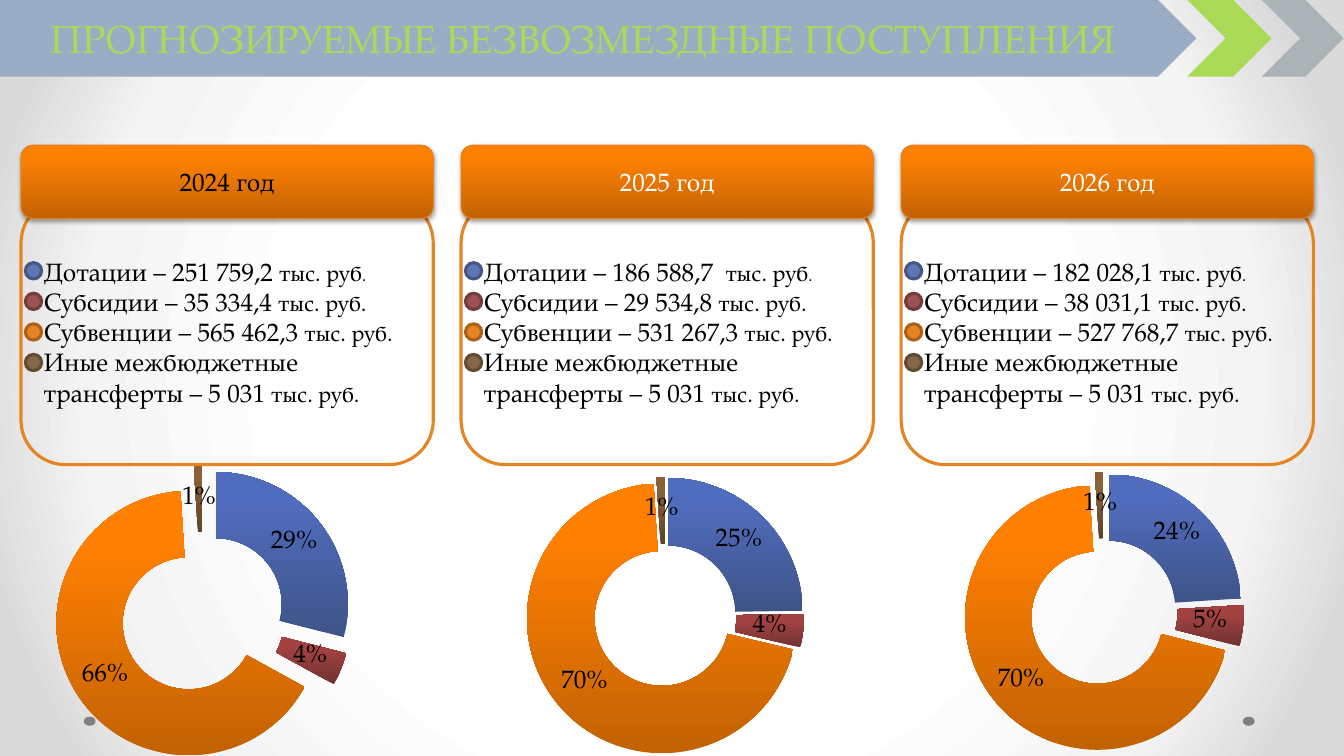
"""Build the slide on forecast grants for 2024 to 2026."""
from pptx import Presentation
from pptx.chart import data as cd
from pptx.dml.color import RGBColor
from pptx.enum import chart as ch, shapes as sh, text as tx
from pptx.oxml import parse_xml
from pptx.oxml.ns import nsdecls, qn
from pptx.util import Cm, Pt

FONT = "TeX Gyre Pagella"
BLACK = RGBColor(0x00, 0x00, 0x00)
WHITE = RGBColor(0xFF, 0xFF, 0xFF)
GREEN = RGBColor(0xAB, 0xD9, 0x58)
STEEL = RGBColor(0x9B, 0xAD, 0xC4)
SILVER = RGBColor(0xAC, 0xB3, 0xB6)
GRAY = RGBColor(0x80, 0x80, 0x80)
PALE = RGBColor(0xF4, 0xF4, 0xF4)
EDGE = RGBColor(0xDA, 0xDA, 0xDA)
ORANGE = RGBColor(0xE6, 0x84, 0x22)
RIM = RGBColor(0xE6, 0x81, 0x1C)
DOTS = [
    (RGBColor(0x60, 0x76, 0xB4), RGBColor(0x47, 0x57, 0x85)),
    (RGBColor(0x9C, 0x52, 0x52), RGBColor(0x73, 0x3D, 0x3D)),
    (ORANGE, RGBColor(0xAA, 0x62, 0x19)),
    (RGBColor(0x84, 0x66, 0x48), RGBColor(0x62, 0x4B, 0x35)),
]
FADES = [
    (RGBColor(0x3E, 0x53, 0x87), RGBColor(0x50, 0x6C, 0xBC)),
    (RGBColor(0x71, 0x31, 0x31), RGBColor(0xA4, 0x42, 0x42)),
    (RGBColor(0xC2, 0x62, 0x03), RGBColor(0xFF, 0x80, 0x02)),
    (RGBColor(0x5E, 0x43, 0x28), RGBColor(0x89, 0x62, 0x3A)),
]
UP = '<a:lin ang="16200000" scaled="0"/>'
ROUND = ('<a:path path="circle">'
         '<a:fillToRect l="50000" t="50000" r="50000" b="50000"/></a:path>')
UNIT = "тыс. руб."
YEARS = [
    ("2024 год", BLACK, ("251 759,2 ", "35 334,4 ", "565 462,3 "),
     (29, 4, 66, 1), 25, (0.84, 9.8, 8.26), (0.053, 0, 0.765, 0.909)),
    ("2025 год", WHITE, ("186 588,7  ", "29 534,8 ", "531 267,3 "),
     (25, 4, 71, 1), 6, (12.09, 9.04, 7.32), (0.095, 0.039, 0.843, 0.957)),
    ("2026 год", WHITE, ("182 028,1 ", "38 031,1 ", "527 768,7 "),
     (24, 5, 70, 1), 12, (22.71, 10.11, 7.24), (0.155, 0.024, 0.699, 0.976)),
]
NAMES = ["Дотации", "Субсидии", "Субвенции", "Иные межбюджетные трансферты"]

deck = Presentation()
deck.slide_width, deck.slide_height = Cm(33.87), Cm(19.05)
slide = deck.slides.add_slide(deck.slide_layouts[5])


def draw(kind, box, fill=None, line=None, width=2.25):
    item = slide.shapes.add_shape(kind, *[Cm(v) for v in box])
    item.shadow.inherit = False
    if fill is None:
        item.fill.background()
    else:
        item.fill.solid()
        item.fill.fore_color.rgb = fill
    if line is None:
        item.line.fill.background()
    else:
        item.line.color.rgb = line
        item.line.width = Pt(width)
    return item


def fade(fill, stops, tail):
    fill.gradient()
    old = fill._xPr.find(qn("a:gradFill"))
    marks = "".join(f'<a:gs pos="{pos * 1000}"><a:srgbClr val="{hue}"/></a:gs>'
                    for pos, hue in stops)
    new = parse_xml(f'<a:gradFill {nsdecls("a")} rotWithShape="1">'
                    f'<a:gsLst>{marks}</a:gsLst>{tail}</a:gradFill>')
    old.getparent().replace(old, new)


fade(slide.background.fill, [(50, WHITE), (76, PALE), (92, EDGE)], ROUND)
for left in (2.11, 31.32):
    draw(sh.MSO_SHAPE.OVAL, (left, 18.06, 0.3, 0.23), GRAY)
draw(sh.MSO_SHAPE.PENTAGON, (0, 0, 30.15, 1.93), STEEL)
draw(sh.MSO_SHAPE.CHEVRON, (29.92, 0, 2.13, 1.93), GREEN)
draw(sh.MSO_SHAPE.CHEVRON, (31.8, 0, 2.06, 1.93), SILVER)

title = slide.shapes.title
title.left, title.top, title.width, title.height = Cm(0), Cm(0), Cm(29.4), Cm(1.93)
slide.shapes._spTree.append(title._element)
title.text_frame.vertical_anchor = tx.MSO_ANCHOR.MIDDLE
para = title.text_frame.paragraphs[0]
para.alignment = tx.PP_ALIGN.CENTER
run = para.add_run()
run.text = "ПРОГНОЗИРУЕМЫЕ БЕЗВОЗМЕЗДНЫЕ ПОСТУПЛЕНИЯ"
run.font.name, run.font.size = FONT, Pt(28)
run.font.color.rgb = GREEN

for col, (year, ink, sums, parts, burst, spot, plot) in enumerate(YEARS):
    left = 0.53 + col * 11.09
    panel = draw(sh.MSO_SHAPE.ROUNDED_RECTANGLE, (left, 5, 10.39, 6.71), None, ORANGE)
    frame = panel.text_frame
    frame.vertical_anchor = tx.MSO_ANCHOR.MIDDLE
    for row, (name, total) in enumerate(zip(NAMES, (*sums, "5 031 "))):
        para = frame.add_paragraph() if row else frame.paragraphs[0]
        para.alignment = tx.PP_ALIGN.LEFT
        bits = [(f"{name} – {total}", 18)]
        bits += [(UNIT, 16)] if row else [(UNIT[:-1], 16), (UNIT[-1], 12)]
        for words, size in bits:
            run = para.add_run()
            run.text = words
            run.font.name, run.font.size = FONT, Pt(size)
            run.font.color.rgb = BLACK

    head = draw(sh.MSO_SHAPE.ROUNDED_RECTANGLE, (left, 3.66, 10.39, 1.85),
                ORANGE, RIM, 0.75)
    low, high = FADES[2]
    fade(head.fill, [(0, low), (80, RGBColor(0xFB, 0x80, 0x04)), (100, high)], UP)
    head._element.spPr.find(qn("a:effectLst")).append(parse_xml(
        f'<a:outerShdw {nsdecls("a")} blurRad="39370" dist="22860" dir="5400000" '
        'rotWithShape="0"><a:srgbClr val="000000"><a:alpha val="35000"/>'
        '</a:srgbClr></a:outerShdw>'))
    head.text_frame.vertical_anchor = tx.MSO_ANCHOR.MIDDLE
    para = head.text_frame.paragraphs[0]
    para.alignment = tx.PP_ALIGN.CENTER
    run = para.add_run()
    run.text = year
    run.font.name, run.font.size = FONT, Pt(18)
    run.font.color.rgb = ink

    data = cd.CategoryChartData()
    data.categories = ["1", "2", "3", "4"]
    data.add_series("Series 1", parts)
    x, wide, high = spot
    ring = slide.shapes.add_chart(ch.XL_CHART_TYPE.DOUGHNUT, Cm(x), Cm(11.73),
                                  Cm(wide), Cm(high), data).chart
    ring.has_legend = ring.has_title = False
    ring.font.name, ring.font.size = FONT, Pt(18)
    ring.font.color.rgb = BLACK
    series = ring.plots[0].series[0]
    for num, (low, high) in enumerate(FADES):
        form = series.points[num].format
        fade(form.fill, [(0, low), (80, high), (100, high)], UP)
        form.line.fill.background()
    series._element.find(qn("c:dPt")).addprevious(
        parse_xml(f'<c:explosion {nsdecls("c")} val="{burst}"/>'))
    tags = series.data_labels
    tags.show_percentage, tags.show_value = True, False
    tags.number_format, tags.number_format_is_linked = "0%", False
    area = ring._chartSpace.chart.plotArea
    for old in area.findall(qn("c:layout")):
        area.remove(old)
    sizes = "".join(f'<c:{key} val="{val}"/>' for key, val in zip("xywh", plot))
    area.insert(0, parse_xml(
        f'<c:layout {nsdecls("c")}><c:manualLayout><c:layoutTarget val="inner"/>'
        f'<c:xMode val="edge"/><c:yMode val="edge"/>{sizes}'
        '</c:manualLayout></c:layout>'))

    for row, (fill, rim) in enumerate(DOTS):
        draw(sh.MSO_SHAPE.FLOWCHART_CONNECTOR,
             (left + 0.11, 6.62 + row * 0.77, 0.41, 0.41), fill, rim)

deck.save("out.pptx")
